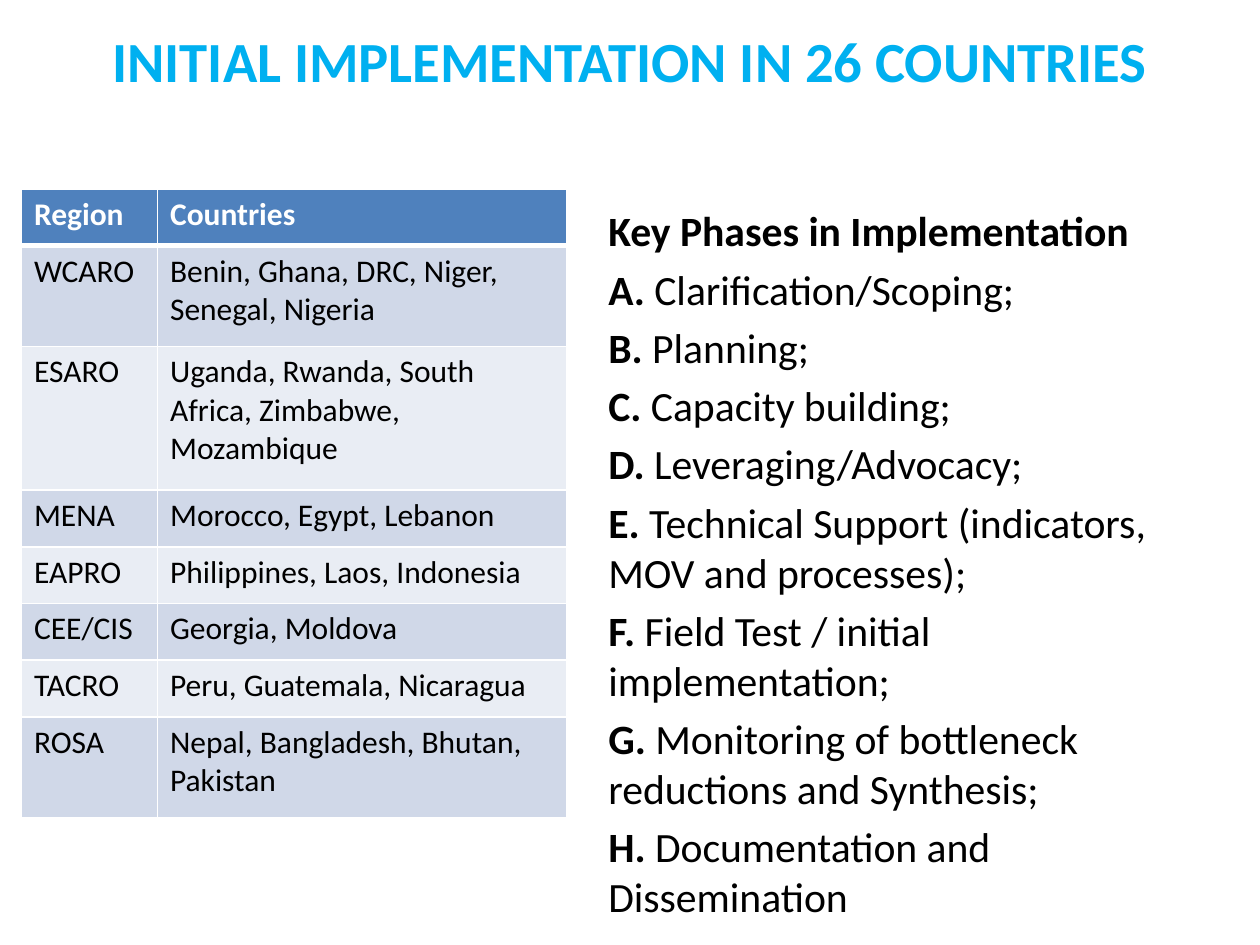
import pptx
import pptx.dml.color
import pptx.enum.text
import pptx.oxml
import pptx.oxml.ns
import pptx.util

REGIONS = [
    ("Region", "Countries", 4.5),
    ("WCARO", "Benin, Ghana, DRC, Niger, Senegal, Nigeria", 8),
    ("ESARO", "Uganda, Rwanda, South Africa, Zimbabwe, Mozambique", 11.4),
    ("MENA", "Morocco, Egypt, Lebanon", 4.5),
    ("EAPRO", "Philippines, Laos, Indonesia", 4.5),
    ("CEE/CIS", "Georgia, Moldova", 4.5),
    ("TACRO", "Peru, Guatemala, Nicaragua", 4.5),
    ("ROSA", "Nepal, Bangladesh, Bhutan, Pakistan", 8),
]
PHASES = [
    "Clarification/Scoping;",
    "Planning;",
    "Capacity building;",
    "Leveraging/Advocacy;",
    "Technical Support (indicators, MOV and processes);",
    "Field Test / initial implementation;",
    "Monitoring of bottleneck reductions and Synthesis;",
    "Documentation and Dissemination",
]


def color(value):
    return pptx.dml.color.RGBColor.from_string(value)


class Page:
    """Holds the style and the current slide, measured on a grid of 100 columns by 75 rows."""

    font = "Calibri"
    ink = "000000"
    white = "FFFFFF"
    accent = "00B0F0"
    header = "4F81BD"
    bands = ("E9EDF4", "D0D8E8")

    def __init__(self, deck):
        self.slide = deck.slides.add_slide(deck.slide_layouts[6])
        self.unit = deck.slide_width / 100

    def span(self, count):
        return round(count * self.unit)

    def style(self, para, size, ink, bold=None):
        para.font.name = self.font
        para.font.size = pptx.util.Pt(size)
        para.font.color.rgb = color(ink)
        para.font.bold = bold

    def text_frame(self, *place):
        box = self.slide.shapes.add_textbox(*map(self.span, place))
        box.text_frame.word_wrap = True
        return box.text_frame

    def title(self, text, *place):
        frame = self.text_frame(*place)
        frame.vertical_anchor = pptx.enum.text.MSO_ANCHOR.MIDDLE
        para = frame.paragraphs[0]
        para.text = text
        para.alignment = pptx.enum.text.PP_ALIGN.CENTER
        self.style(para, 32.4, self.accent, True)

    def phases(self, heading, items, *place):
        frame = self.text_frame(*place)
        lines = [(heading, "")]
        lines += [(f"{letter}. ", item) for letter, item in zip("ABCDEFGH", items)]
        for index, parts in enumerate(lines):
            para = frame.add_paragraph() if index else frame.paragraphs[0]
            para.space_before = pptx.util.Pt(4.7)
            self.style(para, 23.8, self.ink)
            for part, bold in zip(parts, (True, False)):
                if part:
                    run = para.add_run()
                    run.text = part
                    run.font.bold = bold

    def borders(self, cell, top, bottom):
        widths = {"lnL": 1, "lnR": 1, "lnT": top, "lnB": bottom}
        for index, (side, width) in enumerate(widths.items()):
            line = pptx.oxml.parse_xml(
                f'<a:{side} {pptx.oxml.ns.nsdecls("a")} w="{pptx.util.Pt(width)}">'
                f'<a:solidFill><a:srgbClr val="{self.white}"/></a:solidFill></a:{side}>'
            )
            cell._tc.get_or_add_tcPr().insert(index, line)

    def table(self, records, widths, left, top):
        heights = [record[-1] for record in records]
        place = left, top, sum(widths), sum(heights)
        grid = self.slide.shapes.add_table(
            len(records), len(widths), *map(self.span, place)
        ).table
        for column, width in zip(grid.columns, widths):
            column.width = self.span(width)
        for number, (*texts, height) in enumerate(records):
            grid.rows[number].height = self.span(height)
            is_header = number == 0
            for index, text in enumerate(texts):
                cell = grid.cell(number, index)
                cell.text = text
                cell.fill.solid()
                cell.fill.fore_color.rgb = color(
                    self.header if is_header else self.bands[number % 2]
                )
                ink = self.white if is_header else self.ink
                self.style(cell.text_frame.paragraphs[0], 18, ink, is_header)
                self.borders(cell, 3 if number == 1 else 1, 3 if is_header else 1)


def main():
    deck = pptx.Presentation()
    deck.slide_width = pptx.util.Inches(10)
    deck.slide_height = pptx.util.Inches(7.5)
    page = Page(deck)
    page.title("INITIAL IMPLEMENTATION IN 26 COUNTRIES", 5, 0, 90, 9.5)
    page.table(REGIONS, (10.8, 32.5), 1.7, 15)
    page.phases("Key Phases in Implementation", PHASES, 47.3, 15.8, 47.5, 49.2)
    deck.save("out.pptx")


if __name__ == "__main__":
    main()
